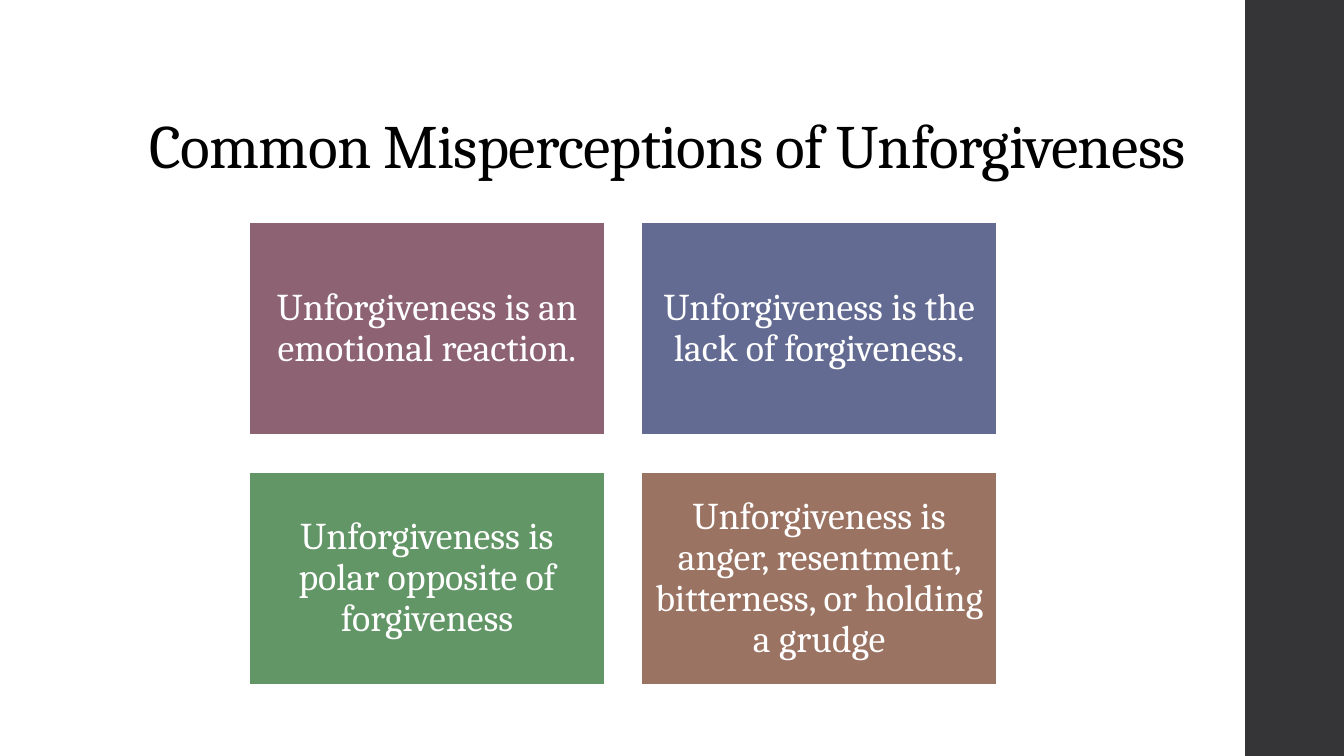
from pptx import Presentation
from pptx.dml.color import RGBColor
from pptx.enum.shapes import MSO_SHAPE
from pptx.enum.text import MSO_ANCHOR, MSO_AUTO_SIZE, PP_ALIGN
from pptx.util import Inches, Pt

WHITE = RGBColor(0xFF, 0xFF, 0xFF)
BLACK = RGBColor(0x00, 0x00, 0x00)
CHARCOAL = RGBColor(0x35, 0x35, 0x37)
PLUM = RGBColor(0x8D, 0x63, 0x74)
SLATE = RGBColor(0x63, 0x6B, 0x92)
GREEN = RGBColor(0x62, 0x96, 0x66)
BROWN = RGBColor(0x9B, 0x73, 0x62)

FONT = "Cambria"
TITLE = "Common Misperceptions of Unforgiveness"
CARDS = [
    ("Unforgiveness is an emotional reaction.", PLUM),
    ("Unforgiveness is the lack of forgiveness.", SLATE),
    ("Unforgiveness is polar opposite of forgiveness", GREEN),
    ("Unforgiveness is anger, resentment, bitterness, or holding a grudge", BROWN),
]
COLUMNS = 2
GRID_LEFT, GRID_TOP = 2.47, 2.2
CARD_W, CARD_H, GAP = 3.53, 2.12, 0.36
INSET = Inches(0.11)


def add_rect(slide, left, top, width, height, fill):
    sp = slide.shapes.add_shape(
        MSO_SHAPE.RECTANGLE, Inches(left), Inches(top), Inches(width), Inches(height))
    sp.shadow.inherit = False
    sp.fill.solid()
    sp.fill.fore_color.rgb = fill
    sp.line.fill.background()
    return sp


def write(tf, text, size, color, align, anchor):
    tf.word_wrap = True
    tf.auto_size = MSO_AUTO_SIZE.NONE
    tf.vertical_anchor = anchor
    p = tf.paragraphs[0]
    p.alignment = align
    p.line_spacing = 0.9
    r = p.add_run()
    r.text = text
    r.font.name = FONT
    r.font.size = Pt(size)
    r.font.color.rgb = color
    return r


def main():
    prs = Presentation()
    prs.slide_width, prs.slide_height = Inches(13.33), Inches(7.5)
    slide = prs.slides.add_slide(prs.slide_layouts[5])

    add_rect(slide, 12.35, 0, 0.98, 7.5, CHARCOAL)

    title = slide.shapes.title
    title.left, title.top = Inches(1.38), Inches(0.4)
    title.width, title.height = Inches(10.6), Inches(1.45)
    r = write(title.text_frame, TITLE, 44, BLACK, PP_ALIGN.LEFT, MSO_ANCHOR.BOTTOM)
    r.font._element.set("spc", "-50")

    for i, (text, fill) in enumerate(CARDS):
        row, col = divmod(i, COLUMNS)
        sp = add_rect(slide, GRID_LEFT + col * (CARD_W + GAP),
                      GRID_TOP + row * (CARD_H + GAP), CARD_W, CARD_H, fill)
        sp.line.color.rgb = WHITE
        sp.line.width = Pt(1.35)
        tf = sp.text_frame
        tf.margin_left = tf.margin_right = tf.margin_top = tf.margin_bottom = INSET
        write(tf, text, 27, WHITE, PP_ALIGN.CENTER, MSO_ANCHOR.MIDDLE)

    prs.save("out.pptx")


if __name__ == "__main__":
    main()
